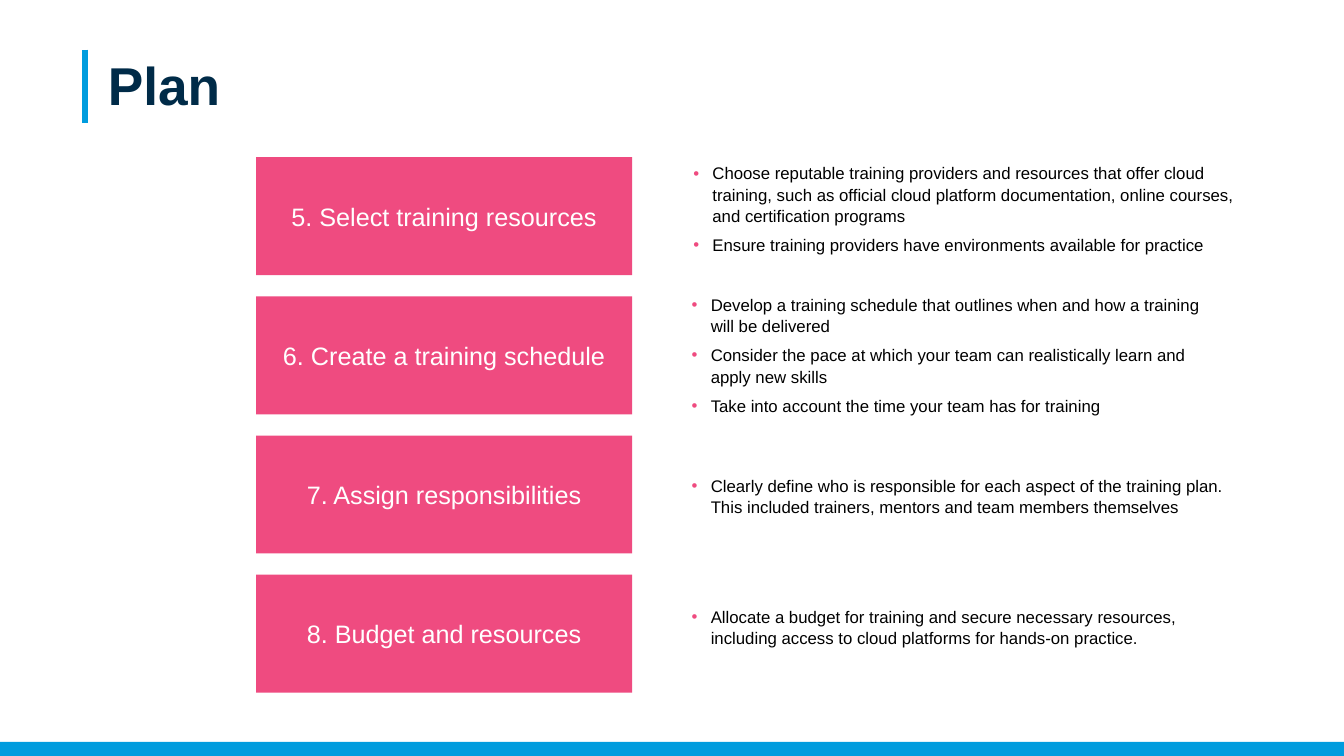
from dataclasses import dataclass

from lxml import etree
from pptx import Presentation
from pptx.dml.color import RGBColor
from pptx.enum.shapes import MSO_CONNECTOR, MSO_SHAPE
from pptx.enum.text import MSO_ANCHOR, MSO_AUTO_SIZE, PP_ALIGN
from pptx.oxml.ns import qn
from pptx.util import Pt


@dataclass(frozen=True)
class Theme:
    font: str = "Arial"
    navy: str = "002B48"
    blue: str = "009CDE"
    pink: str = "EF4B80"
    black: str = "000000"
    white: str = "FFFFFF"
    title_size: float = 38
    step_size: float = 18
    note_size: float = 12


THEME = Theme()
SLIDE_W, SLIDE_H = 960, 540
STEP_LEFT, STEP_TOP, STEP_W, STEP_H, STEP_PITCH = 182.9, 112.3, 268.6, 84.3, 99.4

# Step label, notes box (left, top, width, height), notes
STEPS = [
    ("5. Select training resources", (480.2, 112.3, 425.5, 71.3), [
        "Choose reputable training providers and resources that offer cloud training, "
        "such as official cloud platform documentation, online courses, "
        "and certification programs",
        "Ensure training providers have environments available for practice",
    ]),
    ("6. Create a training schedule", (479, 206, 404.6, 92.2), [
        "Develop a training schedule that outlines when and how a training "
        "will be delivered",
        "Consider the pace at which your team can realistically learn and "
        "apply new skills",
        "Take into account the time your team has for training",
    ]),
    ("7. Assign responsibilities", (479, 335.3, 404.6, 36), [
        "Clearly define who is responsible for each aspect of the training plan. "
        "This included trainers, mentors and team members themselves",
    ]),
    ("8. Budget and resources", (479, 429.1, 404.6, 36), [
        "Allocate a budget for training and secure necessary resources, "
        "including access to cloud platforms for hands-on practice.",
    ]),
]


def rgb(color):
    return RGBColor.from_string(color)


def add_bullet(p, color, left=21.6, hanging=13.7):
    pPr = p._p.get_or_add_pPr()
    pPr.set("marL", str(Pt(left)))
    pPr.set("indent", str(-Pt(hanging)))
    clr = etree.SubElement(pPr, qn("a:buClr"))
    etree.SubElement(clr, qn("a:srgbClr")).set("val", color)
    etree.SubElement(pPr, qn("a:buFont")).set("typeface", THEME.font)
    etree.SubElement(pPr, qn("a:buChar")).set("char", "•")


def write(tf, lines, size, color, bold=False, align=PP_ALIGN.LEFT,
          anchor=MSO_ANCHOR.TOP, spacing=None, gap=0, bullet=None):
    tf.word_wrap = True
    tf.vertical_anchor = anchor
    for i, line in enumerate(lines):
        p = tf.add_paragraph() if i else tf.paragraphs[0]
        if bullet:
            add_bullet(p, bullet)
        p.alignment = align
        p.space_before = Pt(gap if i else 0)
        if spacing:
            p.line_spacing = spacing
        r = p.add_run()
        r.text = line
        r.font.name = THEME.font
        r.font.size = Pt(size)
        r.font.bold = bold
        r.font.color.rgb = rgb(color)


def add_block(s, x, y, w, h, color):
    sp = s.shapes.add_shape(MSO_SHAPE.RECTANGLE, Pt(x), Pt(y), Pt(w), Pt(h))
    sp.shadow.inherit = False
    sp.fill.solid()
    sp.fill.fore_color.rgb = rgb(color)
    sp.line.fill.background()
    return sp


def add_title(s, text):
    sp = s.shapes.title
    sp.left, sp.top, sp.width, sp.height = Pt(77), Pt(44.6), Pt(817.2), Pt(80)
    tf = sp.text_frame
    tf.auto_size = MSO_AUTO_SIZE.NONE
    tf.margin_left = tf.margin_top = tf.margin_right = tf.margin_bottom = 0
    write(tf, [text], THEME.title_size, THEME.navy, bold=True,
          spacing=Pt(THEME.title_size))


def add_title_rule(s):
    line = s.shapes.add_connector(MSO_CONNECTOR.STRAIGHT,
                                  Pt(60.5), Pt(35.5), Pt(60.5), Pt(87.8))
    line.line.color.rgb = rgb(THEME.blue)
    line.line.width = Pt(4.5)
    etree.SubElement(line._element.spPr, qn("a:effectLst"))


def add_step(s, row, label):
    sp = add_block(s, STEP_LEFT, STEP_TOP + row * STEP_PITCH, STEP_W, STEP_H, THEME.pink)
    write(sp.text_frame, [label], THEME.step_size, THEME.white,
          align=PP_ALIGN.CENTER, anchor=MSO_ANCHOR.MIDDLE)


def add_notes_box(s, box, notes):
    tf = s.shapes.add_textbox(*map(Pt, box)).text_frame
    tf.auto_size = MSO_AUTO_SIZE.SHAPE_TO_FIT_TEXT
    write(tf, notes, THEME.note_size, THEME.black, spacing=1.05, gap=6,
          bullet=THEME.pink)


def main():
    prs = Presentation()
    prs.slide_width, prs.slide_height = Pt(SLIDE_W), Pt(SLIDE_H)
    s = prs.slides.add_slide(prs.slide_layouts[5])

    # Title and page decoration
    add_title_rule(s)
    add_block(s, 0, 530, SLIDE_W, 10, THEME.blue)
    add_title(s, "Plan")

    # Steps with their notes
    for row, (label, box, notes) in enumerate(STEPS):
        add_step(s, row, label)
        add_notes_box(s, box, notes)

    prs.save("out.pptx")


if __name__ == "__main__":
    main()
